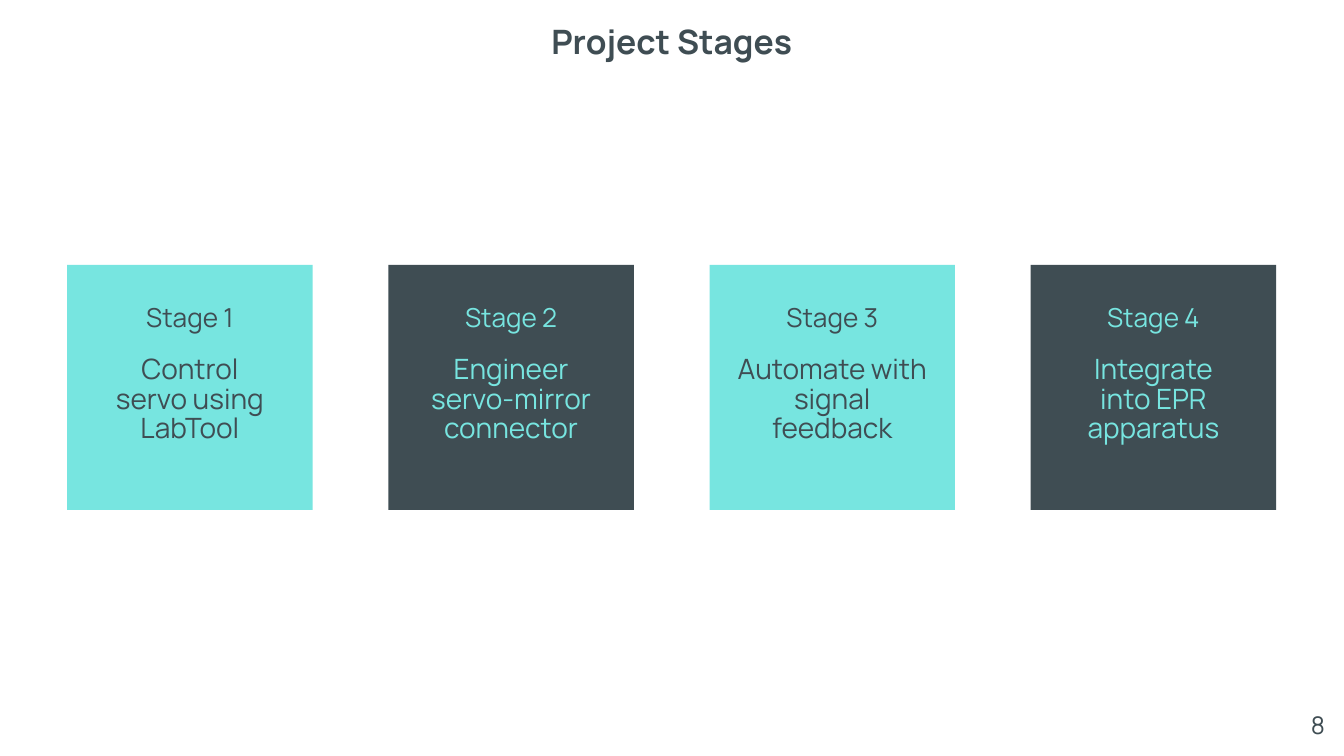
from typing import NamedTuple

from pptx import Presentation
from pptx.dml.color import RGBColor
from pptx.enum.shapes import MSO_SHAPE
from pptx.enum.text import MSO_ANCHOR, PP_ALIGN
from pptx.slide import Slide
from pptx.util import Cm, Pt

AQUA = RGBColor(0x77, 0xE5, 0xE0)
SLATE = RGBColor(0x3F, 0x4D, 0x53)
FONT = "Manrope"
LEFT, TOP = 1.27, 5.01
WIDTH, HEIGHT = 4.64, 4.63
PITCH = 6.07
HEAD = 3.86


class Stage(NamedTuple):
    goal: str
    width: float


class Box(NamedTuple):
    left: float
    top: float
    width: float
    height: float


STAGES = [
    Stage("Control servo using LabTool", 3.73),
    Stage("Engineer servo-mirror connector", 3.86),
    Stage("Automate with signal feedback", 4.2),
    Stage("Integrate into EPR apparatus", 3.56),
]


def add_text(slide: Slide, box: Box, text: str, size: float, ink: RGBColor,
             align: PP_ALIGN = PP_ALIGN.CENTER, bold: bool = False,
             anchor: MSO_ANCHOR = MSO_ANCHOR.TOP, pace: float = 1.0) -> None:
    frame = slide.shapes.add_textbox(*map(Cm, box)).text_frame
    frame.word_wrap = True
    frame.vertical_anchor = anchor
    frame.margin_left = frame.margin_right = Cm(0.25)
    frame.margin_top = frame.margin_bottom = Cm(0.25)
    para = frame.paragraphs[0]
    para.alignment = align
    para.line_spacing = pace
    run = para.add_run()
    run.text = text
    run.font.name = FONT
    run.font.size = Pt(size)
    run.font.bold = bold
    run.font.color.rgb = ink


def add_stage(slide: Slide, index: int, stage: Stage) -> None:
    fill, ink = (SLATE, AQUA) if index % 2 else (AQUA, SLATE)
    left = LEFT + index * PITCH
    mid = left + WIDTH / 2
    card = slide.shapes.add_shape(
        MSO_SHAPE.RECTANGLE, Cm(left), Cm(TOP), Cm(WIDTH), Cm(HEIGHT))
    card.shadow.inherit = False
    card.fill.solid()
    card.fill.fore_color.rgb = fill
    card.line.fill.background()
    add_text(slide, Box(mid - HEAD / 2, 5.51, HEAD, 0.97),
             f"Stage {index + 1}", 14, ink, anchor=MSO_ANCHOR.MIDDLE)
    add_text(slide, Box(mid - stage.width / 2, 6.48, stage.width, 2.46),
             stage.goal, 15, ink, pace=0.88)


def main() -> None:
    deck = Presentation()
    deck.slide_width, deck.slide_height = Cm(25.4), Cm(14.29)
    slide = deck.slides.add_slide(deck.slide_layouts[6])
    add_text(slide, Box(4.72, 0.15, 15.95, 1.32), "Project Stages",
             18, SLATE, bold=True)
    for index, stage in enumerate(STAGES):
        add_stage(slide, index, stage)
    add_text(slide, Box(23.77, 13.18, 1.52, 1.09), "8", 13, SLATE,
             align=PP_ALIGN.RIGHT)
    deck.save("out.pptx")


if __name__ == "__main__":
    main()
